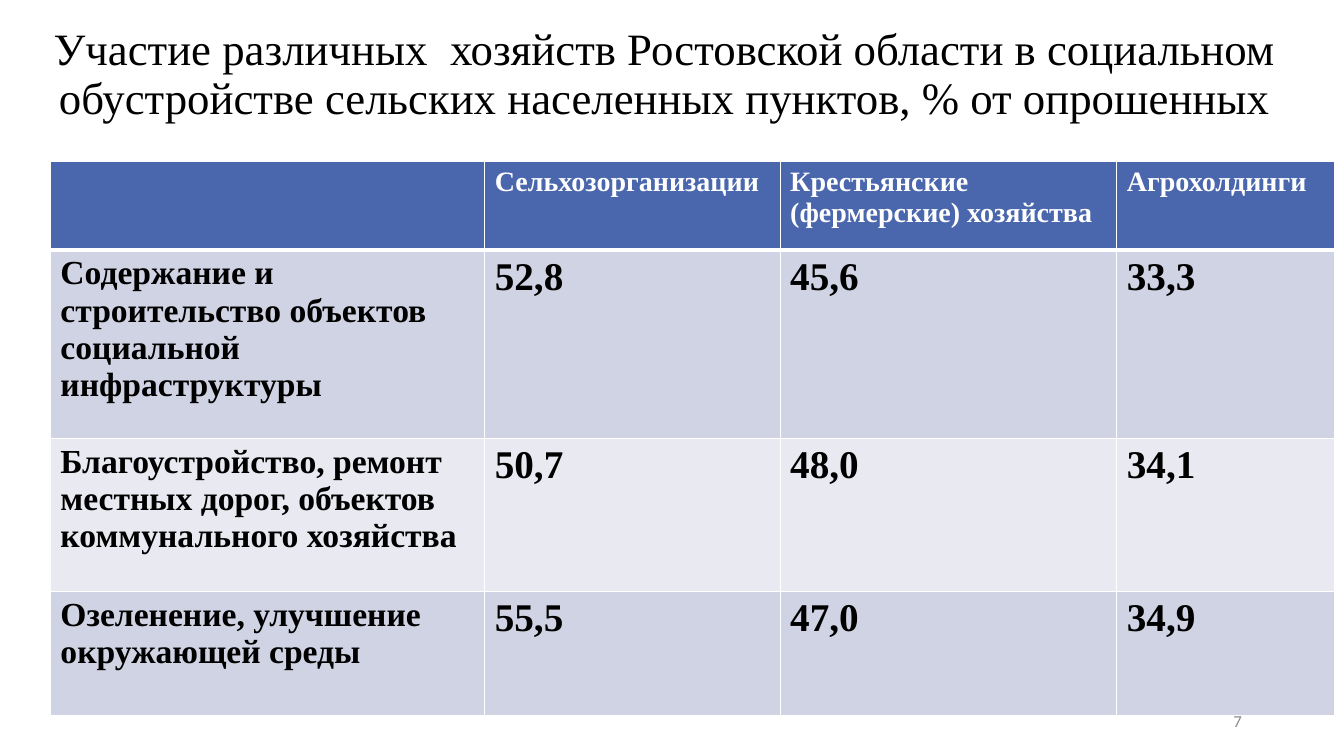
from dataclasses import dataclass

from lxml.etree import SubElement
from pptx import Presentation
from pptx.dml.color import RGBColor
from pptx.enum.text import MSO_ANCHOR, PP_ALIGN
from pptx.oxml.ns import qn
from pptx.util import Pt

SERIF = "Times New Roman"
WHITE, BLACK, GRAY = "FFFFFF", "000000", "8C8C8C"
HEADER_FILL, BAND_FILLS = "4A66AC", ("D0D3E3", "E9EAF1")
THIN, THICK = 1, 3


@dataclass
class TextStyle:
    size: float
    color: str
    name: str = SERIF
    bold: bool = False


@dataclass
class TextBlock:
    text: str
    left: float
    top: float
    width: float
    height: float
    style: TextStyle
    alignment: PP_ALIGN
    line_spacing: float = 1.0


@dataclass
class TableRow:
    height: float
    texts: tuple[str, ...]


HEADER_STYLE = TextStyle(20, WHITE, bold=True)
LABEL_STYLE = TextStyle(24, BLACK, bold=True)
VALUE_STYLE = TextStyle(28, BLACK, bold=True)

TEXT_BLOCKS = (
    TextBlock("Участие различных  хозяйств Ростовской области в социальном "
              "обустройстве сельских населенных пунктов, % от опрошенных",
              11.5, 10.8, 926.6, 86.4, TextStyle(32, BLACK), PP_ALIGN.CENTER, 0.9),
    TextBlock("7", 678.2, 500.4, 216, 28.8, TextStyle(12, GRAY, "Calibri"), PP_ALIGN.RIGHT),
)

TABLE_LEFT, TABLE_TOP = 36, 115.2
COLUMN_WIDTHS = (310.3, 211, 240.5, 155.5)
TABLE_ROWS = (
    TableRow(63.4, ("", "Сельхозорганизации", "Крестьянские (фермерские) хозяйства",
                    "Агрохолдинги")),
    TableRow(134.6, ("Содержание и строительство объектов социальной инфраструктуры",
                     "52,8", "45,6", "33,3")),
    TableRow(109.4, ("Благоустройство, ремонт местных дорог, объектов коммунального хозяйства",
                     "50,7", "48,0", "34,1")),
    TableRow(88.6, ("Озеленение, улучшение окружающей среды", "55,5", "47,0", "34,9")),
)


def rgb(color: str) -> RGBColor:
    return RGBColor.from_string(color)


def style_paragraph(paragraph, style: TextStyle) -> None:
    font = paragraph.font
    font.name, font.size, font.bold = style.name, Pt(style.size), style.bold
    font.color.rgb = rgb(style.color)


def add_text_block(slide, block: TextBlock) -> None:
    shape = slide.shapes.add_textbox(Pt(block.left), Pt(block.top),
                                     Pt(block.width), Pt(block.height))
    frame = shape.text_frame
    frame.word_wrap = True
    frame.vertical_anchor = MSO_ANCHOR.MIDDLE
    frame.text = block.text
    paragraph = frame.paragraphs[0]
    paragraph.alignment = block.alignment
    paragraph.line_spacing = block.line_spacing
    style_paragraph(paragraph, block.style)


def add_borders(cell, top: float, bottom: float) -> None:
    properties = cell._tc.get_or_add_tcPr()
    for side, width in (("L", THIN), ("R", THIN), ("T", top), ("B", bottom)):
        line = SubElement(properties, qn(f"a:ln{side}"), w=str(Pt(width)))
        fill = SubElement(line, qn("a:solidFill"))
        SubElement(fill, qn("a:srgbClr"), val=WHITE)


def fill_cell(cell, text: str, row: int, column: int) -> None:
    add_borders(cell, THICK if row == 1 else THIN, THICK if row == 0 else THIN)
    cell.fill.solid()
    cell.fill.fore_color.rgb = rgb(BAND_FILLS[(row - 1) % 2] if row else HEADER_FILL)
    cell.text = text
    body_style = VALUE_STYLE if column else LABEL_STYLE
    style_paragraph(cell.text_frame.paragraphs[0], body_style if row else HEADER_STYLE)


def add_survey_table(slide) -> None:
    shape = slide.shapes.add_table(
        len(TABLE_ROWS), len(COLUMN_WIDTHS), Pt(TABLE_LEFT), Pt(TABLE_TOP),
        Pt(sum(COLUMN_WIDTHS)), Pt(sum(row.height for row in TABLE_ROWS)))
    table = shape.table
    for column, width in zip(table.columns, COLUMN_WIDTHS):
        column.width = Pt(width)
    for row_index, row in enumerate(TABLE_ROWS):
        table.rows[row_index].height = Pt(row.height)
        for column_index, text in enumerate(row.texts):
            fill_cell(table.cell(row_index, column_index), text, row_index, column_index)


def main() -> None:
    presentation = Presentation()
    presentation.slide_width, presentation.slide_height = Pt(960), Pt(540)
    slide = presentation.slides.add_slide(presentation.slide_layouts[6])

    # Title, table, then the page number on top
    title, page_number = TEXT_BLOCKS
    add_text_block(slide, title)
    add_survey_table(slide)
    add_text_block(slide, page_number)

    presentation.save("out.pptx")


if __name__ == "__main__":
    main()
